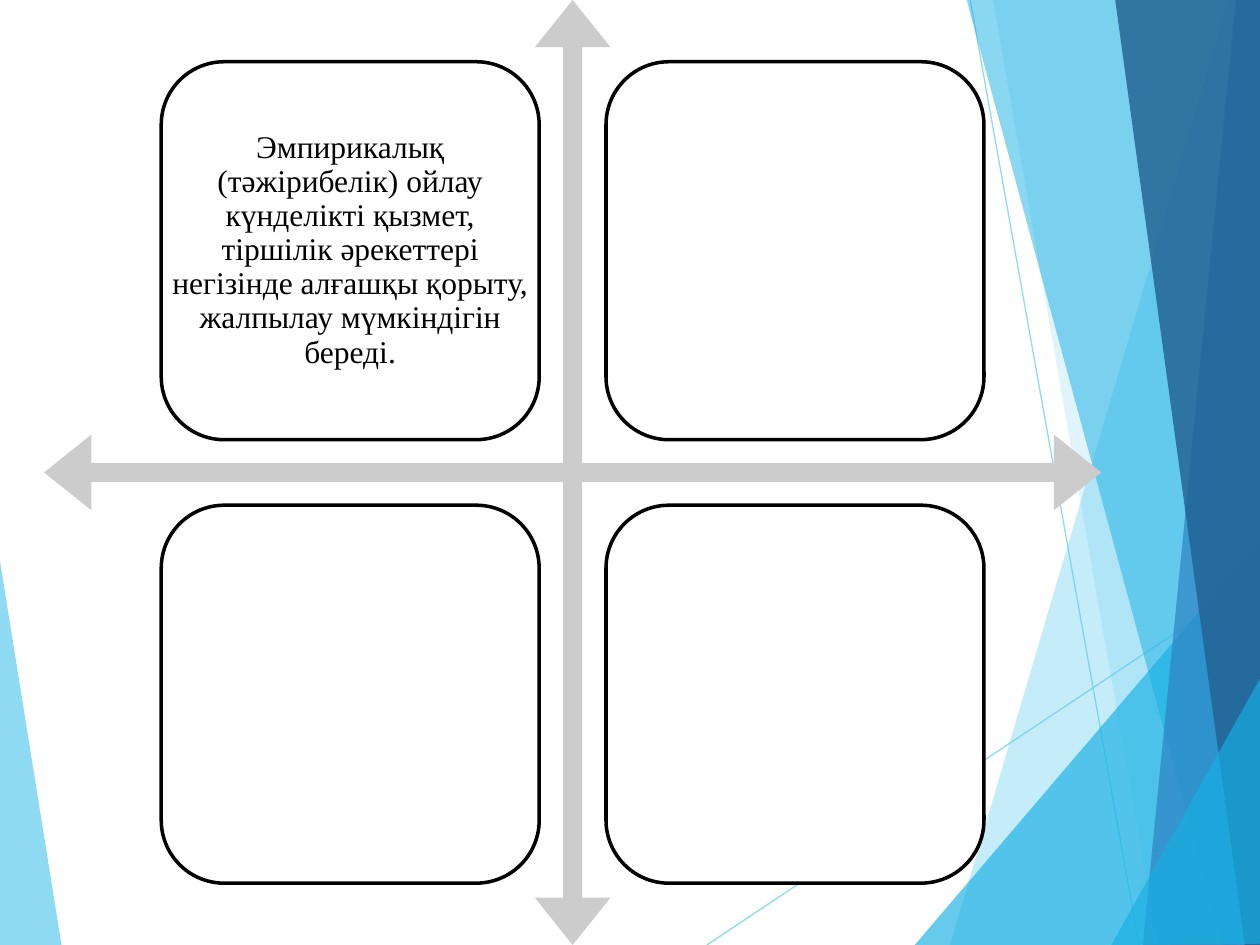
from dataclasses import dataclass

from lxml import etree
from pptx import Presentation
from pptx import util as u
from pptx.dml import color
from pptx.enum import shapes, text
from pptx.oxml import ns

PX = 9144
SLIDE_W, SLIDE_H = 1000, 750
COLORS = {
    "sky": "5FCBEF",
    "cyan": "17B0E4",
    "blue": "2E83C3",
    "navy": "226292",
    "arrow": "CCCCCC",
    "panel": "FFFFFF",
    "ink": "000000",
}
PANEL_SIZE = 300
PANEL_LEFTS = (128, 481)
PANEL_TOPS = (49, 401)
STATEMENT = (
    "Эмпирикалық (тәжірибелік) ойлау күнделікті қызмет, тіршілік әрекеттері "
    "негізінде алғашқы қорыту, жалпылау мүмкіндігін береді."
)


@dataclass(frozen=True)
class Facet:
    points: tuple[tuple[int, int], ...]
    color: str
    opacity: int


@dataclass(frozen=True)
class Ray:
    start: tuple[int, int]
    end: tuple[int, int]


LEFT_FACET = Facet(((-1, 439), (49, 751), (-1, 750)), "sky", 70)
RAYS = (Ray((561, 750), (1001, 457)), Ray((770, 0), (904, 750)))
RIGHT_FACETS = (
    Facet(((975, 0), (754, 750), (1002, 751), (1001, 1)), "sky", 36),
    Facet(((788, -1), (919, 750), (1001, 750), (1001, -1)), "sky", 20),
    Facet(((726, 750), (1000, 429), (1001, 750)), "cyan", 66),
    Facet(((767, -1), (970, 750), (1001, 749), (1001, -1)), "cyan", 50),
    Facet(((981, -1), (907, 750), (1001, 750), (1000, -1)), "blue", 70),
    Facet(((885, -1), (988, 750), (1002, 750), (1000, -1)), "navy", 82),
    Facet(((882, 750), (1002, 535), (1002, 749)), "cyan", 66),
)


def px(*lengths: int) -> list[int]:
    return [u.Emu(length * PX) for length in lengths]


def rgb(name: str) -> color.RGBColor:
    return color.RGBColor.from_string(COLORS[name])


def set_opacity(element, percent: int) -> None:
    tint = next(element.iter(ns.qn("a:srgbClr")))
    etree.SubElement(tint, ns.qn("a:alpha"), val=str(percent * 1000))


def fill_plain(shape, name: str) -> None:
    shape.shadow.inherit = False
    shape.fill.solid()
    shape.fill.fore_color.rgb = rgb(name)
    shape.line.fill.background()


def draw_facet(slide, facet: Facet) -> None:
    builder = slide.shapes.build_freeform(*facet.points[0], scale=PX)
    builder.add_line_segments(facet.points[1:], close=True)
    shape = builder.convert_to_shape()
    fill_plain(shape, facet.color)
    set_opacity(shape._element.spPr, facet.opacity)


def draw_ray(slide, ray: Ray) -> None:
    line = slide.shapes.add_connector(
        shapes.MSO_CONNECTOR.STRAIGHT, *px(*ray.start, *ray.end)
    )
    line.line.color.rgb = rgb("sky")
    line.line.width = u.Pt(0.75)
    properties = line._element.spPr
    set_opacity(properties, 70)
    etree.SubElement(properties, ns.qn("a:effectLst"))


def draw_axes(slide) -> None:
    axes = slide.shapes.add_shape(
        shapes.MSO_SHAPE.QUAD_ARROW, *px(35, 0, 839, SLIDE_H)
    )
    fill_plain(axes, "arrow")
    for index, ratio in enumerate((0.02, 0.04, 0.05)):
        axes.adjustments[index] = ratio


def draw_panel(slide, left: int, top: int) -> None:
    panel = slide.shapes.add_shape(
        shapes.MSO_SHAPE.ROUNDED_RECTANGLE,
        *px(left, top, PANEL_SIZE, PANEL_SIZE),
    )
    fill_plain(panel, "panel")
    panel.line.color.rgb = rgb("ink")
    panel.line.width = u.Pt(2)


def write_statement(slide, left: int, top: int) -> None:
    box = slide.shapes.add_textbox(*px(left, top, PANEL_SIZE, PANEL_SIZE))
    frame = box.text_frame
    frame.word_wrap = True
    frame.vertical_anchor = text.MSO_ANCHOR.MIDDLE
    (inset,) = px(7)
    frame.margin_left = frame.margin_right = inset
    frame.margin_top = frame.margin_bottom = inset
    paragraph = frame.paragraphs[0]
    paragraph.alignment = text.PP_ALIGN.CENTER
    paragraph.line_spacing = 0.9
    run = paragraph.add_run()
    run.text = STATEMENT
    run.font.name = "Times New Roman"
    run.font.size = u.Pt(18)
    run.font.color.rgb = rgb("ink")


def main() -> None:
    deck = Presentation()
    deck.slide_width, deck.slide_height = px(SLIDE_W, SLIDE_H)
    slide = deck.slides.add_slide(deck.slide_layouts[6])
    draw_facet(slide, LEFT_FACET)
    for ray in RAYS:
        draw_ray(slide, ray)
    for facet in RIGHT_FACETS:
        draw_facet(slide, facet)
    draw_axes(slide)
    for top in PANEL_TOPS:
        for left in PANEL_LEFTS:
            draw_panel(slide, left, top)
    write_statement(slide, PANEL_LEFTS[0], PANEL_TOPS[0])
    deck.save("out.pptx")


if __name__ == "__main__":
    main()
